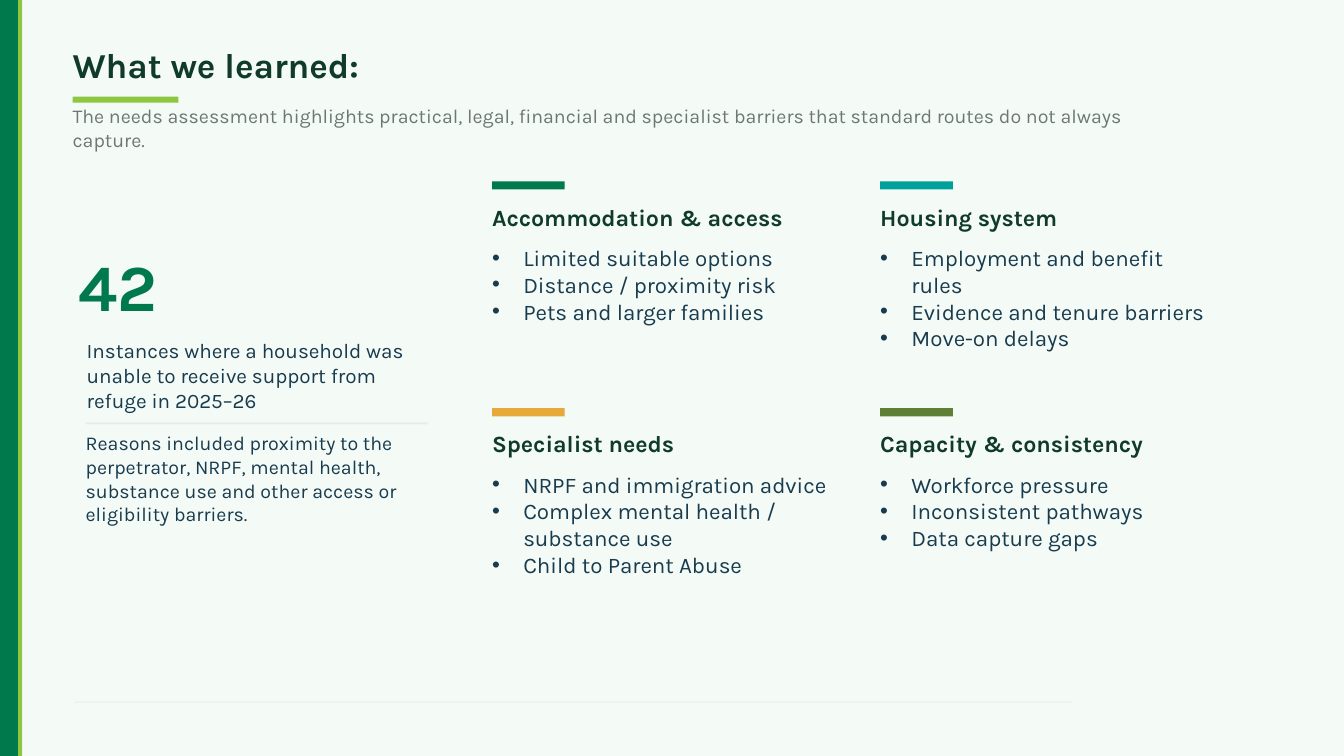
from dataclasses import dataclass

from lxml import etree
from pptx import Presentation
from pptx.dml.color import RGBColor
from pptx.enum import shapes, text
from pptx.oxml import ns
from pptx.util import Inches, Pt


@dataclass(frozen=True)
class Theme:
    font: str = "Karla"
    background: str = "F4FBF7"
    green: str = "007A4D"
    lime: str = "8DC63F"
    teal: str = "00A19A"
    amber: str = "E7A939"
    olive: str = "5E7F35"
    rule: str = "E6EEE9"
    heading: str = "103B2A"
    body: str = "183B4D"
    muted: str = "6D7875"
    title_size: float = 25
    number_size: float = 47
    heading_size: float = 16.6
    bullet_size: float = 16
    caption_size: float = 14.8
    small_size: float = 14


THEME = Theme()


@dataclass(frozen=True)
class Box:
    left: float
    top: float
    width: float
    height: float

    def lengths(self) -> tuple:
        return tuple(Inches(value) for value in
                     (self.left, self.top, self.width, self.height))


@dataclass(frozen=True)
class Bar:
    box: Box
    color: str


@dataclass(frozen=True)
class Label:
    box: Box
    lines: tuple[str, ...]
    size: float
    color: str = THEME.body
    bold: bool = False
    middle: bool = True
    bulleted: bool = False


@dataclass(frozen=True)
class Theme_Group:
    """One group of findings: accent bar, heading and bullets."""
    heading: str
    color: str
    bullets: tuple[str, ...]


BARS = (
    Bar(Box(0, 0, 0.18, 7.5), THEME.green),
    Bar(Box(0.18, 0, 0.04, 7.5), THEME.lime),
    Bar(Box(0.74, 6.96, 9.9, 0.01), THEME.rule),
    Bar(Box(0.72, 0.96, 1.05, 0.06), THEME.lime),
    Bar(Box(0.85, 4.19, 3.4, 0.02), THEME.rule),
)

TITLE = Label(Box(0.72, 0.42, 9.8, 0.44), ("What we learned:",),
              THEME.title_size, THEME.heading, bold=True)

LABELS = (
    Label(Box(0.72, 1.1, 10.8, 0.33),
          ("The needs assessment highlights practical, legal, financial and "
           "specialist barriers that standard routes do not always capture.",),
          THEME.small_size, THEME.muted),
    Label(Box(0.78, 2.42, 2.15, 0.82), ("42",),
          THEME.number_size, THEME.green, bold=True),
    Label(Box(0.86, 3.36, 3.45, 0.72),
          ("Instances where a household was unable to receive support from "
           "refuge in 2025–26",), THEME.caption_size),
    Label(Box(0.85, 4.28, 3.5, 1.26),
          ("Reasons included proximity to the perpetrator, NRPF, mental health, "
           "substance use and other access or eligibility barriers.",),
          THEME.small_size, middle=False),
)

GROUPS = (
    Theme_Group("Accommodation & access", THEME.green,
                ("Limited suitable options", "Distance / proximity risk",
                 "Pets and larger families")),
    Theme_Group("Housing system", THEME.teal,
                ("Employment and benefit rules", "Evidence and tenure barriers",
                 "Move-on delays")),
    Theme_Group("Specialist needs", THEME.amber,
                ("NRPF and immigration advice",
                 "Complex mental health / substance use",
                 "Child to Parent Abuse")),
    Theme_Group("Capacity & consistency", THEME.olive,
                ("Workforce pressure", "Inconsistent pathways",
                 "Data capture gaps")),
)
GRID_LEFT, GRID_TOP = 4.88, 1.8
COLUMN_STEP, ROW_STEP = 3.85, 2.25
BULLET_INDENT = 0.31


def draw_bar(slide, bar: Bar) -> None:
    shape = slide.shapes.add_shape(shapes.MSO_SHAPE.RECTANGLE, *bar.box.lengths())
    shape.shadow.inherit = False
    shape.fill.solid()
    shape.fill.fore_color.rgb = RGBColor.from_string(bar.color)
    shape.line.fill.background()


def add_bullet(paragraph) -> None:
    properties = paragraph._p.get_or_add_pPr()
    properties.set("marL", str(Inches(BULLET_INDENT)))
    properties.set("indent", str(-Inches(BULLET_INDENT)))
    etree.SubElement(properties, ns.qn("a:buFont"), typeface="Arial")
    etree.SubElement(properties, ns.qn("a:buChar"), char="•")


def write_label(shape, label: Label) -> None:
    """Place the shape and fill it with the label's formatted lines."""
    shape.left, shape.top, shape.width, shape.height = label.box.lengths()
    frame = shape.text_frame
    anchor = text.MSO_ANCHOR.MIDDLE if label.middle else text.MSO_ANCHOR.TOP
    frame_format = dict(margin_left=0, margin_top=0, margin_right=0,
                        margin_bottom=0, word_wrap=True,
                        auto_size=text.MSO_AUTO_SIZE.NONE,
                        vertical_anchor=anchor)
    for name, value in frame_format.items():
        setattr(frame, name, value)
    font_format = dict(name=THEME.font, size=Pt(label.size), bold=label.bold)
    for index, line in enumerate(label.lines):
        paragraph = frame.add_paragraph() if index else frame.paragraphs[0]
        paragraph.alignment = text.PP_ALIGN.LEFT
        if label.bulleted:
            add_bullet(paragraph)
        run = paragraph.add_run()
        run.text = line
        for name, value in font_format.items():
            setattr(run.font, name, value)
        run.font.color.rgb = RGBColor.from_string(label.color)


def draw_label(slide, label: Label) -> None:
    write_label(slide.shapes.add_textbox(*label.box.lengths()), label)


def draw_group(slide, group: Theme_Group, left: float, top: float) -> None:
    draw_bar(slide, Bar(Box(left, top, 0.72, 0.08), group.color))
    draw_label(slide, Label(Box(left, top + 0.22, 3.15, 0.26), (group.heading,),
                            THEME.heading_size, THEME.heading, bold=True))
    draw_label(slide, Label(Box(left, top + 0.62, 3.35, 1.08), group.bullets,
                            THEME.bullet_size, middle=False, bulleted=True))


def main() -> None:
    presentation = Presentation()
    presentation.slide_width = Inches(13.33)
    presentation.slide_height = Inches(7.5)
    title_only = presentation.slide_layouts.get_by_name("Title Only")
    slide = presentation.slides.add_slide(title_only)
    slide.background.fill.solid()
    slide.background.fill.fore_color.rgb = RGBColor.from_string(THEME.background)

    write_label(slide.shapes.title, TITLE)
    for bar in BARS:
        draw_bar(slide, bar)
    for label in LABELS:
        draw_label(slide, label)
    for index, group in enumerate(GROUPS):
        row, column = divmod(index, 2)
        draw_group(slide, group, GRID_LEFT + column * COLUMN_STEP,
                   GRID_TOP + row * ROW_STEP)
    presentation.save("out.pptx")


if __name__ == "__main__":
    main()
